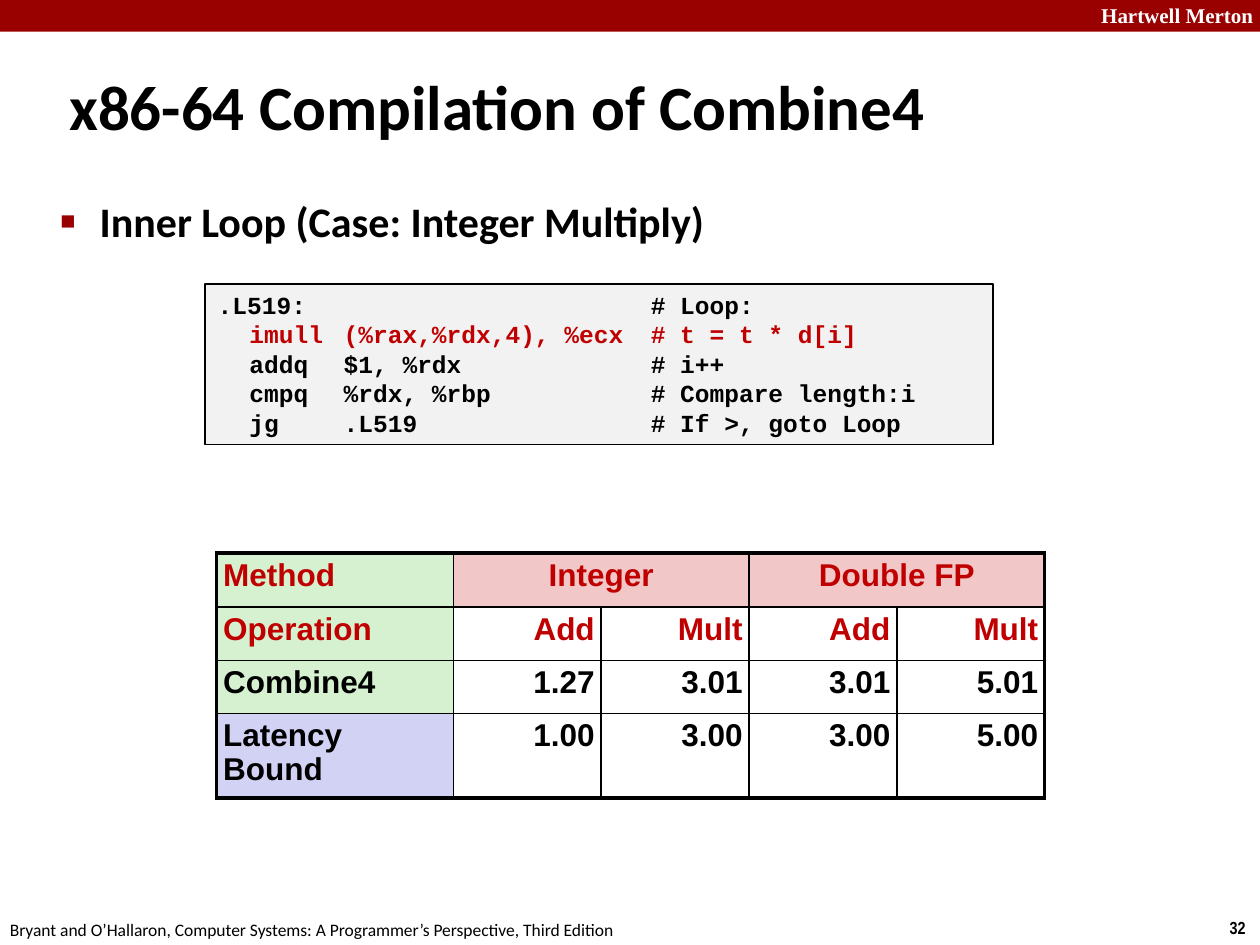
from lxml import etree
from pptx import Presentation
from pptx import util as u
from pptx.dml.color import RGBColor
from pptx.enum import shapes, text
from pptx.oxml import ns

RED, BLACK, WHITE = "C00000", "000000", "FFFFFF"
BRAND_RED, CODE_GREY = "990000", "F2F2F2"
GREEN, PINK, LILAC = "D5F1CF", "F1C7C7", "D2D2F4"
LEFT, CENTER, RIGHT = text.PP_ALIGN.LEFT, text.PP_ALIGN.CENTER, text.PP_ALIGN.RIGHT

CODE = [
    ".L519:\t\t# Loop:",
    "\timull\t(%rax,%rdx,4), %ecx\t# t = t * d[i]",
    "\taddq\t$1, %rdx\t# i++",
    "\tcmpq\t%rdx, %rbp\t# Compare length:i",
    "\tjg\t.L519\t# If >, goto Loop",
]
HOT_LINE = 1
TAB_STOPS = (0.64, 2.54, 8.73)

TIMINGS = [
    ["Method", "Integer", None, "Double FP", None],
    ["Operation", "Add", "Mult", "Add", "Mult"],
    ["Combine4", "1.27", "3.01", "3.01", "5.01"],
    ["Latency Bound", "1.00", "3.00", "3.00", "5.00"],
]
COLUMN_WIDTHS = (4.77, 2.98, 2.98, 2.98, 2.98)
ROW_HEIGHTS = (1.09, 1.07, 1.07, 1.7)
LABEL_FILLS = (GREEN, GREEN, GREEN, LILAC)


def color(value):
    """Turn a hex string into a colour."""
    return RGBColor.from_string(value)


def paint(shape, value):
    """Give a shape or cell a solid fill."""
    shape.fill.solid()
    shape.fill.fore_color.rgb = color(value)


def style(para, font, size, value=BLACK, bold=True):
    """Format every run of a paragraph."""
    for span in para.runs:
        span.font.name = font
        span.font.size = u.Pt(size)
        span.font.bold = bold
        span.font.color.rgb = color(value)


def add_child(parent, tag, **attributes):
    """Append a DrawingML element."""
    return etree.SubElement(parent, ns.qn(tag), attributes)


def add_label(page, box, words, font, size, **look):
    """Place one line of text and return its paragraph."""
    label = page.shapes.add_textbox(*map(u.Cm, box))
    label.text_frame.word_wrap = False
    para = label.text_frame.paragraphs[0]
    para.text = words
    style(para, font, size, **look)
    return para


def add_banner(page, left, top, width, height):
    """Draw the top band with the school name at its right end."""
    band = page.shapes.add_shape(
        shapes.MSO_SHAPE.RECTANGLE, *map(u.Cm, (left, top, width, height)))
    band.shadow.inherit = False
    paint(band, BRAND_RED)
    band.line.fill.background()
    add_label(page, (left + width - 3.45, top - 0.08, 3.63, 0.76),
              "Hartwell Merton", "Times New Roman", 12, value=WHITE)


def add_footer(page, left, top, width, height):
    """Place the book credit and the page number."""
    add_label(page, (left - 0.05, top, 12.9, height),
              "Bryant and O’Hallaron, Computer Systems: "
              "A Programmer’s Perspective, Third Edition",
              "Calibri", 10, bold=False)
    add_label(page, (left + width - 0.86, top - 0.05, 0.86, height),
              "32", "Arial Narrow", 10)


def set_title(page, left, top, width, height):
    """Move, fill and format the title placeholder."""
    title = page.shapes.title
    title.left, title.top, title.width, title.height = map(
        u.Cm, (left, top, width, height))
    frame = title.text_frame
    frame.text = "x86-64 Compilation of Combine4"
    frame.vertical_anchor = text.MSO_ANCHOR.MIDDLE
    para = frame.paragraphs[0]
    para.alignment = LEFT
    style(para, "Calibri", 36)


def add_bullet(page, left, top, width, height):
    """Place the bulleted heading."""
    para = add_label(page, (left, top, width, height),
                     "Inner Loop (Case: Integer Multiply)", "Calibri", 24)
    page.shapes[-1].text_frame.word_wrap = True
    props = para._p.get_or_add_pPr()
    props.set("marL", str(u.Cm(0.79)))
    props.set("indent", str(u.Cm(-0.79)))
    add_child(add_child(props, "a:buClr"), "a:srgbClr", val=BRAND_RED)
    add_child(props, "a:buSzPct", val="60000")
    add_child(props, "a:buFont", typeface="Arial")
    add_child(props, "a:buChar", char="■")


def add_code(page, left, top, width, height):
    """Draw the assembly listing on tab stops."""
    panel = page.shapes.add_shape(
        shapes.MSO_SHAPE.RECTANGLE, *map(u.Cm, (left, top, width, height)))
    panel.shadow.inherit = False
    paint(panel, CODE_GREY)
    panel.line.color.rgb = color(BLACK)
    panel.line.width = u.Pt(1)
    frame = panel.text_frame
    frame.vertical_anchor = text.MSO_ANCHOR.TOP
    frame.text = "\n".join(CODE)
    for number, para in enumerate(frame.paragraphs):
        para.alignment = LEFT
        para.line_spacing = u.Pt(16.8)
        style(para, "Courier New", 14, RED if number == HOT_LINE else BLACK)
        stops = add_child(para._p.get_or_add_pPr(), "a:tabLst")
        for stop in TAB_STOPS:
            add_child(stops, "a:tab", pos=str(u.Cm(stop)), algn="l")


def set_borders(cell, outer):
    """Rule a cell, heavier on its outer sides."""
    props = cell._tc.get_or_add_tcPr()
    for index, side in enumerate("LRTB"):
        width = u.Pt(2.25 if side in outer else 1)
        line = add_child(props, "a:ln" + side, w=str(width))
        add_child(add_child(line, "a:solidFill"), "a:srgbClr", val=BLACK)
        props.insert(index, line)


def add_timings(page, left, top):
    """Build the timing table with merged group headings."""
    rows, columns = len(ROW_HEIGHTS), len(COLUMN_WIDTHS)
    table = page.shapes.add_table(
        rows, columns, u.Cm(left), u.Cm(top),
        u.Cm(sum(COLUMN_WIDTHS)), u.Cm(sum(ROW_HEIGHTS))).table
    table.first_row = table.horz_banding = False
    for column, width in zip(table.columns, COLUMN_WIDTHS):
        column.width = u.Cm(width)
    for row, height in zip(table.rows, ROW_HEIGHTS):
        row.height = u.Cm(height)
    for start in (1, 3):
        table.cell(0, start).merge(table.cell(0, start + 1))
    for r, values in enumerate(TIMINGS):
        for c, value in enumerate(values):
            cell = table.cell(r, c)
            end = c + (cell.span_width if cell.is_merge_origin else 1)
            edges = {"L": c == 0, "R": end == columns,
                     "T": r == 0, "B": r == rows - 1}
            header_fill = PINK if r == 0 else WHITE
            paint(cell, LABEL_FILLS[r] if c == 0 else header_fill)
            set_borders(cell, [side for side, outer in edges.items() if outer])
            cell.margin_left = cell.margin_right = u.Cm(0.13)
            cell.margin_top = cell.margin_bottom = u.Cm(0.13)
            if value is None:
                continue
            cell.text = value
            para = cell.text_frame.paragraphs[0]
            para.line_spacing = 0.95
            para.alignment = LEFT if c == 0 else CENTER if r == 0 else RIGHT
            style(para, "Arial", 18, RED if r < 2 else BLACK)


def main():
    """Assemble and save the slide."""
    deck = Presentation()
    deck.slide_width, deck.slide_height = u.Cm(25.4), u.Cm(19.05)
    page = deck.slides.add_slide(deck.slide_layouts.get_by_name("Title Only"))
    add_banner(page, 0, 0, 25.4, 0.64)
    add_footer(page, 0, 18.41, 25.4, 0.69)
    set_title(page, 1.14, 1.07, 21.08, 2.11)
    add_bullet(page, 0.97, 3.81, 22.94, 1.9)
    add_code(page, 4.14, 5.72, 15.88, 3.24)
    add_timings(page, 4.37, 11.15)
    deck.save("out.pptx")


if __name__ == "__main__":
    main()
